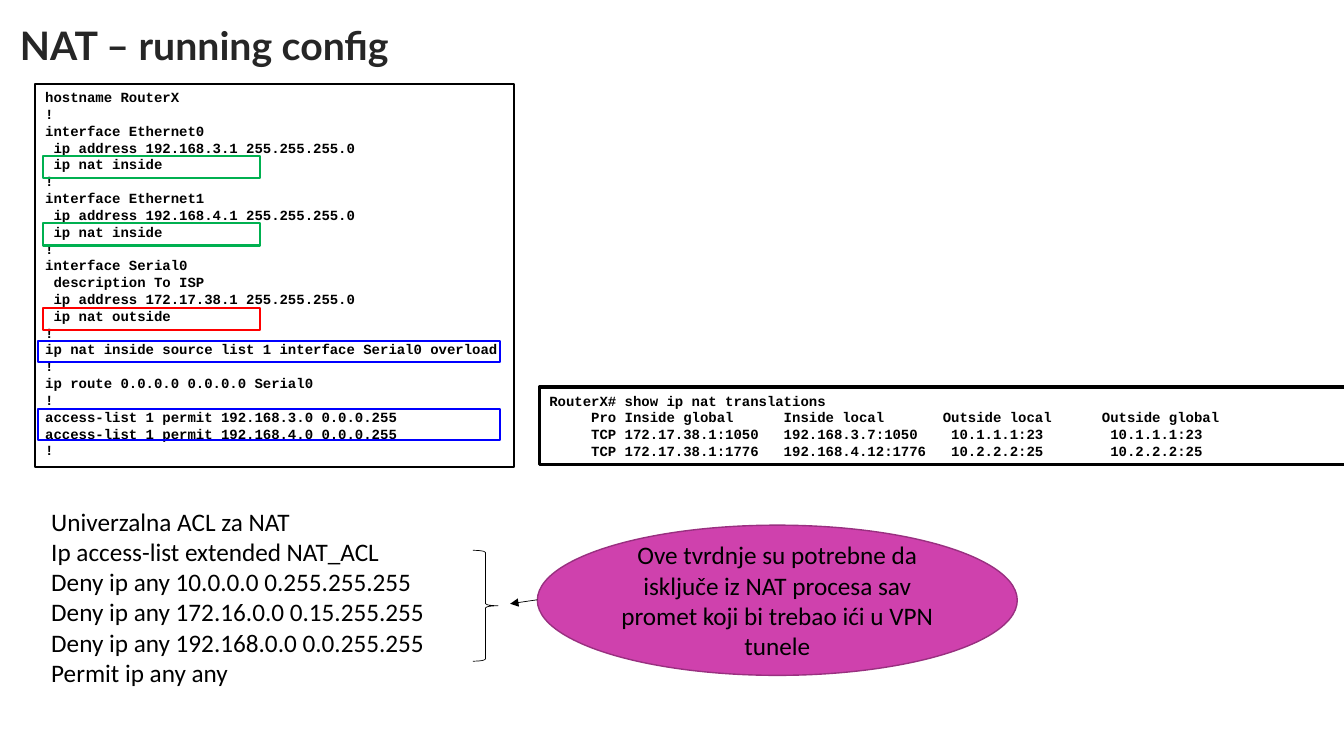
from dataclasses import dataclass
from lxml.etree import SubElement
from pptx import Presentation
from pptx.dml.color import RGBColor
from pptx.enum.shapes import MSO_CONNECTOR as Link, MSO_SHAPE as Shape
from pptx.enum.text import MSO_ANCHOR as Anchor, PP_ALIGN as Align
from pptx.oxml.ns import qn
from pptx.util import Inches, Pt

TITLE = "NAT – running config"
CONFIG = """hostname RouterX
!
interface Ethernet0
 ip address 192.168.3.1 255.255.255.0
 ip nat inside
!
interface Ethernet1
 ip address 192.168.4.1 255.255.255.0
 ip nat inside
!
interface Serial0
 description To ISP
 ip address 172.17.38.1 255.255.255.0
 ip nat outside
!
ip nat inside source list 1 interface Serial0 overload
!
ip route 0.0.0.0 0.0.0.0 Serial0
!
access-list 1 permit 192.168.3.0 0.0.0.255
access-list 1 permit 192.168.4.0 0.0.0.255
!"""
OUTPUT = """RouterX# show ip nat translations
     Pro Inside global      Inside local       Outside local      Outside global
     TCP 172.17.38.1:1050   192.168.3.7:1050    10.1.1.1:23        10.1.1.1:23
     TCP 172.17.38.1:1776   192.168.4.12:1776   10.2.2.2:25        10.2.2.2:25"""
ACL = """Univerzalna ACL za NAT
Ip access-list extended NAT_ACL
Deny ip any 10.0.0.0 0.255.255.255
Deny ip any 172.16.0.0 0.15.255.255
Deny ip any 192.168.0.0 0.0.255.255
Permit ip any any"""
NOTE = ("Ove tvrdnje su potrebne da isključe iz NAT procesa sav promet "
        "koji bi trebao ići u VPN tunele")


@dataclass(frozen=True)
class Theme:
    black: str = "000000"
    white: str = "FFFFFF"
    title: str = "262626"
    inner: str = "00B050"
    outer: str = "FF0000"
    rule: str = "0000FF"
    pink: str = "CF41AD"
    plum: str = "993080"
    head: tuple = ("Lato", 28, True)
    code: tuple = ("Courier New", 10, True)
    body: tuple = ("Calibri", 18, False)


look = Theme()
ROW, TOP = 0.167, 0.88
SHORT, LONG = (0.43, 2.15, 0.22), (0.38, 4.58, 0.21)
MARKS = [
    (4, 0, SHORT, look.inner),
    (8, 0, SHORT, look.inner),
    (13, 0, SHORT, look.outer),
    (15, 0, LONG, look.rule),
    (19, 0.1, LONG, look.rule),
]

deck = Presentation()
deck.slide_width, deck.slide_height = Inches(13.33), Inches(7.5)
slide = deck.slides.add_slide(deck.slide_layouts[6])


def write(box, text, style, color=look.black, anchor=Anchor.TOP,
          align=Align.LEFT, wrap=True, space=None):
    frame = box.text_frame
    frame.text = text
    frame.word_wrap = wrap
    frame.vertical_anchor = anchor
    for para in frame.paragraphs:
        para.alignment = align
        para.line_spacing = space
        for run in para.runs:
            font = run.font
            font.name, font.size, font.bold = style[0], Pt(style[1]), style[2]
            font.color.rgb = RGBColor.from_string(color)


def label(place, *args, **opts):
    write(slide.shapes.add_textbox(*map(Inches, place)), *args, **opts)


def draw(kind, place, edge, width, fill=None):
    item = slide.shapes.add_shape(kind, *map(Inches, place))
    item.shadow.inherit = False
    item.line.color.rgb = RGBColor.from_string(edge)
    item.line.width = Pt(width)
    if fill:
        item.fill.solid()
        item.fill.fore_color.rgb = RGBColor.from_string(fill)
    else:
        item.fill.background()
    return item


def arrow(start, end):
    line = slide.shapes.add_connector(Link.STRAIGHT, *map(Inches, start + end))
    line.line.color.rgb = RGBColor.from_string(look.black)
    line.line.width = Pt(0.5)
    SubElement(line.line._get_or_add_ln(), qn("a:tailEnd"), type="triangle")
    SubElement(line._element.spPr, qn("a:effectLst"))


label((0.1, 0.12, 11.47, 0.71), TITLE, look.head, look.title,
      Anchor.MIDDLE, space=0.9)
write(draw(Shape.RECTANGLE, (5.35, 3.84, 8.31, 0.77), look.black, 2.25),
      OUTPUT, look.code)
write(draw(Shape.RECTANGLE, (0.35, 0.83, 4.75, 3.8), look.black, 1.5, look.white),
      CONFIG, look.code, wrap=False)

for row, extra, (left, width, height), color in MARKS:
    place = (left, TOP + row * ROW, width, height + extra)
    draw(Shape.RECTANGLE, place, color, 1.5)

label((0.41, 4.97, 9.92, 1.92), ACL, look.body)
write(draw(Shape.OVAL, (5.33, 5.21, 4.76, 1.49), look.plum, 1, look.pink),
      NOTE, look.body, anchor=Anchor.MIDDLE, align=Align.CENTER)
arrow((5.33, 5.95), (5.06, 5.99))
draw(Shape.RIGHT_BRACE, (4.69, 5.46, 0.25, 1.1), look.black, 0.5)

deck.save("out.pptx")
